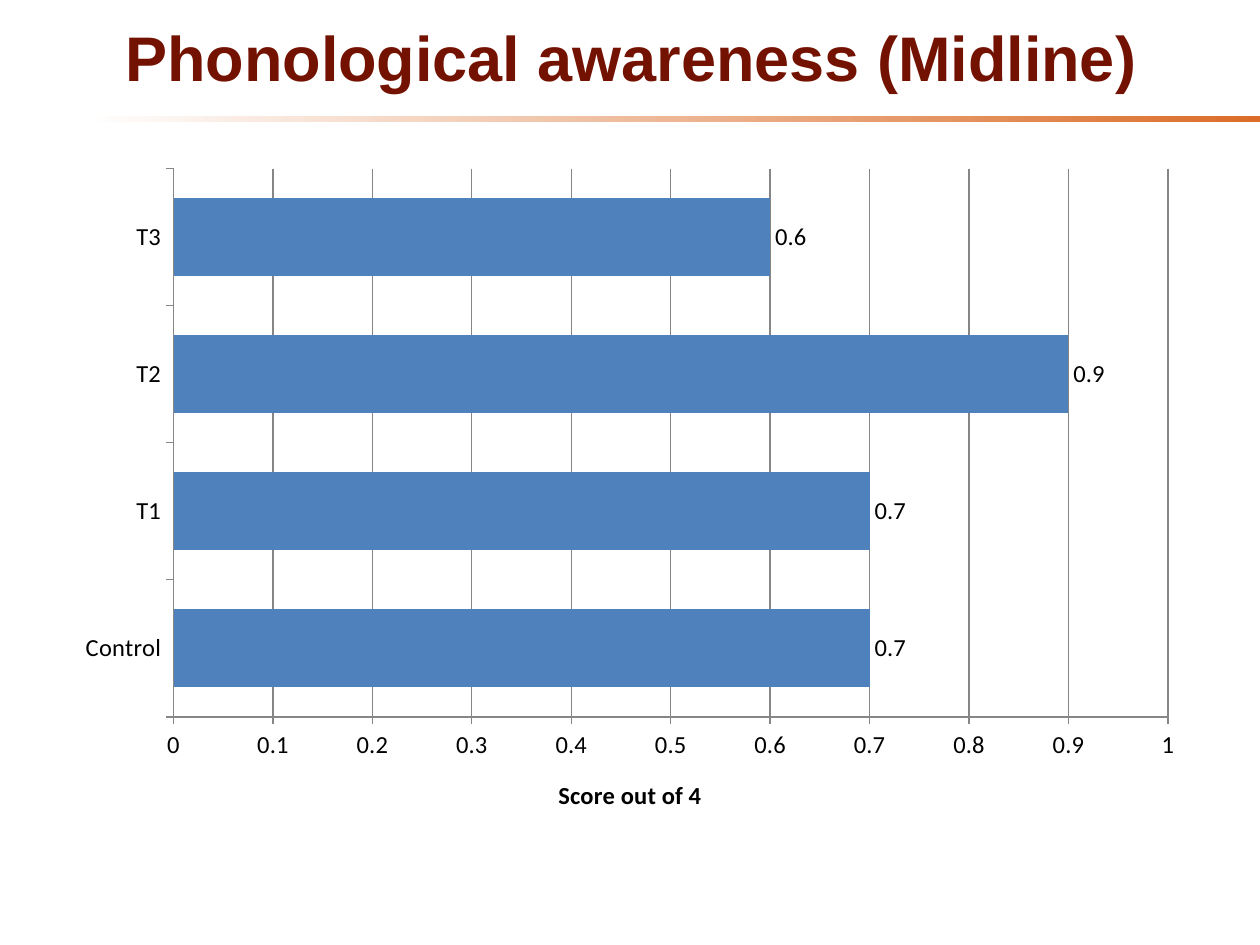
"""Build a slide with a bar chart of midline phonological awareness scores."""
from pptx import Presentation
from pptx.chart.data import CategoryChartData
from pptx.dml.color import RGBColor
from pptx.enum.chart import XL_CHART_TYPE, XL_LABEL_POSITION, XL_TICK_MARK
from pptx.enum.shapes import MSO_SHAPE
from pptx.enum.text import MSO_ANCHOR, PP_ALIGN
from pptx.util import Inches, Pt

TITLE = "Phonological awareness (Midline)"
AXIS_TITLE = "Score out of 4"
SCORES = {"Control": 0.7, "T1": 0.7, "T2": 0.9, "T3": 0.6}

MAROON = RGBColor(0x74, 0x12, 0x02)
ORANGE = RGBColor(0xDB, 0x6D, 0x29)
BLUE = RGBColor(0x4F, 0x81, 0xBD)
GRAY = RGBColor(0x86, 0x86, 0x86)
WHITE = RGBColor(0xFF, 0xFF, 0xFF)
BLACK = RGBColor(0, 0, 0)


def inches(*lengths):
    return [Inches(length) for length in lengths]


def style_font(font, name, size, color, bold):
    font.name, font.size, font.bold = name, Pt(size), bold
    font.color.rgb = color


def add_rule(slide):
    rule = slide.shapes.add_shape(MSO_SHAPE.RECTANGLE, *inches(0.67, 0.92, 9.33, 0.05))
    rule.shadow.inherit = False
    rule.line.fill.background()
    rule.fill.gradient()
    rule.fill.gradient_angle = 0
    for stop, position, color in zip(rule.fill.gradient_stops, (0, 1), (WHITE, ORANGE)):
        stop.position = position
        stop.color.rgb = color


def add_title(slide):
    title = slide.shapes.title
    title.left, title.top, title.width, title.height = inches(0.51, 0.05, 9, 0.79)
    title.text_frame.text = TITLE
    title.text_frame.vertical_anchor = MSO_ANCHOR.MIDDLE
    paragraph = title.text_frame.paragraphs[0]
    paragraph.alignment = PP_ALIGN.CENTER
    style_font(paragraph.font, "Arial", 36, MAROON, True)


def add_score_chart(slide):
    data = CategoryChartData()
    data.categories = list(SCORES)
    data.add_series("Series 1", list(SCORES.values()))
    chart = slide.shapes.add_chart(
        XL_CHART_TYPE.BAR_CLUSTERED, *inches(0.5, 1.23, 9, 5.43), data
    ).chart
    chart.has_legend = False
    chart.has_title = False
    style_font(chart.font, "Calibri", 14, BLACK, False)

    for axis in (chart.category_axis, chart.value_axis):
        axis.major_tick_mark = XL_TICK_MARK.OUTSIDE
        axis.minor_tick_mark = XL_TICK_MARK.NONE
        axis.format.line.color.rgb = GRAY
        axis.format.line.width = Pt(0.75)

    value_axis = chart.value_axis
    value_axis.minimum_scale, value_axis.maximum_scale = 0, 1
    value_axis.major_unit = 0.1
    value_axis.has_major_gridlines = True
    value_axis.major_gridlines.format.line.color.rgb = GRAY
    value_axis.major_gridlines.format.line.width = Pt(0.75)
    title_frame = value_axis.axis_title.text_frame
    title_frame.text = AXIS_TITLE
    style_font(title_frame.paragraphs[0].font, "Calibri", 14, BLACK, True)

    plot = chart.plots[0]
    plot.gap_width = 76
    plot.vary_by_categories = False
    plot.series[0].format.fill.solid()
    plot.series[0].format.fill.fore_color.rgb = BLUE
    plot.has_data_labels = True
    labels = plot.data_labels
    labels.show_value = True
    labels.number_format = "#,##0.0"
    labels.number_format_is_linked = False
    labels.position = XL_LABEL_POSITION.OUTSIDE_END


def main():
    presentation = Presentation()
    presentation.slide_width, presentation.slide_height = inches(10, 7.5)
    slide = presentation.slides.add_slide(presentation.slide_layouts[5])
    add_rule(slide)
    add_title(slide)
    add_score_chart(slide)
    presentation.save("out.pptx")


if __name__ == "__main__":
    main()
